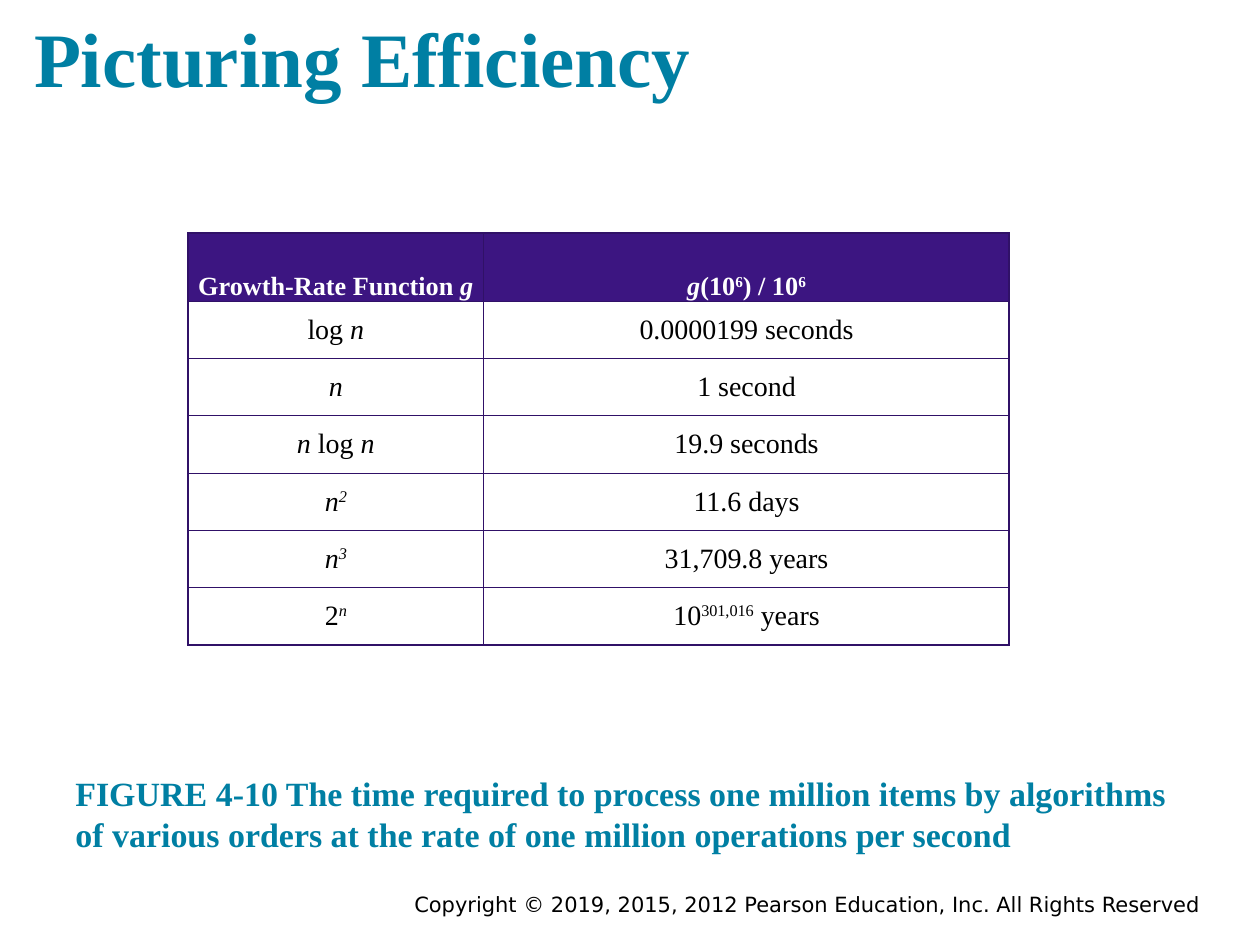
from dataclasses import dataclass

from lxml import etree
from pptx import Presentation
from pptx.dml.color import RGBColor
from pptx.enum.text import MSO_ANCHOR, MSO_AUTO_SIZE, PP_ALIGN
from pptx.oxml.ns import qn
from pptx.slide import Slide
from pptx.util import Inches, Pt

LEFT, CENTER, RIGHT = PP_ALIGN.LEFT, PP_ALIGN.CENTER, PP_ALIGN.RIGHT
TOP, MIDDLE, BOTTOM = MSO_ANCHOR.TOP, MSO_ANCHOR.MIDDLE, MSO_ANCHOR.BOTTOM
NO_AUTOFIT = MSO_AUTO_SIZE.NONE

COLORS = {
    "heading": "007FA3",
    "header": "3C1581",
    "border": "301167",
    "white": "FFFFFF",
    "black": "000000",
}
SERIF, SANS = "Times New Roman", "DejaVu Sans"
OUTER_BORDER, INNER_BORDER = 1, 0.5

# Each cell is a list of (text, marks): "i" is italic, "s" is superscript.
HEADER = [
    [("Growth-Rate Function ", ""), ("g", "i")],
    [("g", "i"), ("(10", ""), ("6", "s"), (") / 10", ""), ("6", "s")],
]
GROWTH_RATES = [
    [[("log ", ""), ("n", "i")], [("0.0000199 seconds", "")]],
    [[("n", "i")], [("1 second", "")]],
    [[("n", "i"), (" log ", ""), ("n", "i")], [("19.9 seconds", "")]],
    [[("n", "i"), ("2", "is")], [("11.6 days", "")]],
    [[("n", "i"), ("3", "is")], [("31,709.8 years", "")]],
    [[("2", ""), ("n", "is")], [("10", ""), ("301,016", "s"), (" years", "")]],
]


@dataclass
class SlideBuilder:
    slide: Slide
    serif: str = SERIF

    def style(self, font, size, color, name=None, bold=False):
        font.name = name or self.serif
        font.size = Pt(size)
        font.bold = bold
        font.color.rgb = RGBColor.from_string(COLORS[color])

    def fill_frame(self, frame, text, size, color, align=LEFT, anchor=BOTTOM,
                   inset=0.1, name=None, bold=True):
        frame.text = text
        frame.word_wrap = True
        frame.auto_size = NO_AUTOFIT
        frame.vertical_anchor = anchor
        frame.margin_left = frame.margin_right = Inches(inset)
        frame.margin_top = frame.margin_bottom = Inches(inset)
        paragraph = frame.paragraphs[0]
        paragraph.alignment = align
        self.style(paragraph.runs[0].font, size, color, name, bold)

    def title(self, text, left, top, width, height):
        heading = self.slide.shapes.title
        heading.left, heading.top = Inches(left), Inches(top)
        heading.width, heading.height = Inches(width), Inches(height)
        self.fill_frame(heading.text_frame, text, 44, "heading")

    def text(self, text, left, top, width, height, **style):
        box = self.slide.shapes.add_textbox(
            Inches(left), Inches(top), Inches(width), Inches(height))
        self.fill_frame(box.text_frame, text, **style)

    def borders(self, cell, widths):
        """Draw the left, right, top and bottom lines of a cell, in points."""
        properties = cell._tc.get_or_add_tcPr()
        for position, (side, width) in enumerate(zip("LRTB", widths)):
            line = etree.Element(qn(f"a:ln{side}"), w=str(Pt(width)))
            fill = etree.SubElement(line, qn("a:solidFill"))
            etree.SubElement(fill, qn("a:srgbClr"), val=COLORS["border"])
            properties.insert(position, line)

    def cell(self, cell, pieces, is_header):
        cell.margin_left = cell.margin_right = 0
        cell.margin_top = cell.margin_bottom = 0
        cell.vertical_anchor = BOTTOM if is_header else MIDDLE
        cell.fill.solid()
        cell.fill.fore_color.rgb = RGBColor.from_string(
            COLORS["header" if is_header else "white"])
        paragraph = cell.text_frame.paragraphs[0]
        paragraph.alignment = CENTER
        for text, marks in pieces:
            run = paragraph.add_run()
            run.text = text
            if is_header:
                self.style(run.font, 15, "white", bold=True)
            else:
                self.style(run.font, 16, "black")
            run.font.italic = "i" in marks
            if "s" in marks:
                run._r.get_or_add_rPr().set("baseline", "32000")

    def table(self, rows, left, top, column_widths, row_heights):
        table = self.slide.shapes.add_table(
            len(rows), len(column_widths), Inches(left), Inches(top),
            Inches(sum(column_widths)), Inches(sum(row_heights))).table
        for column, width in zip(table.columns, column_widths):
            column.width = Inches(width)
        last_row, last_column = len(rows) - 1, len(column_widths) - 1
        for r, (pieces_in_row, height) in enumerate(zip(rows, row_heights)):
            table.rows[r].height = Inches(height)
            for c, pieces in enumerate(pieces_in_row):
                cell = table.cell(r, c)
                self.cell(cell, pieces, is_header=r == 0)
                on_edge = (c == 0, c == last_column, r == 0, r == last_row)
                self.borders(cell, [OUTER_BORDER if edge else INNER_BORDER
                                    for edge in on_edge])


def main():
    presentation = Presentation()
    presentation.slide_width = Inches(10)
    presentation.slide_height = Inches(7.5)
    title_only = presentation.slide_layouts[5]
    builder = SlideBuilder(presentation.slides.add_slide(title_only))

    builder.text(
        "Copyright © 2019, 2015, 2012 Pearson Education, Inc. All Rights Reserved",
        1.75, 7.03, 7.83, 0.31, size=12, color="black", align=RIGHT,
        anchor=TOP, inset=0.05, name=SANS, bold=False)
    builder.title("Picturing Efficiency", 0.17, 0, 9.31, 0.92)
    builder.text(
        "FIGURE 4-10 The time required to process one million items by "
        "algorithms of various orders at the rate of one million operations "
        "per second",
        0.5, 6.07, 9, 0.81, size=19.4, color="heading")
    builder.table([HEADER] + GROWTH_RATES, 1.49, 1.85, [2.35, 4.17],
                  [0.54] + [0.455] * len(GROWTH_RATES))
    presentation.save("out.pptx")


if __name__ == "__main__":
    main()
